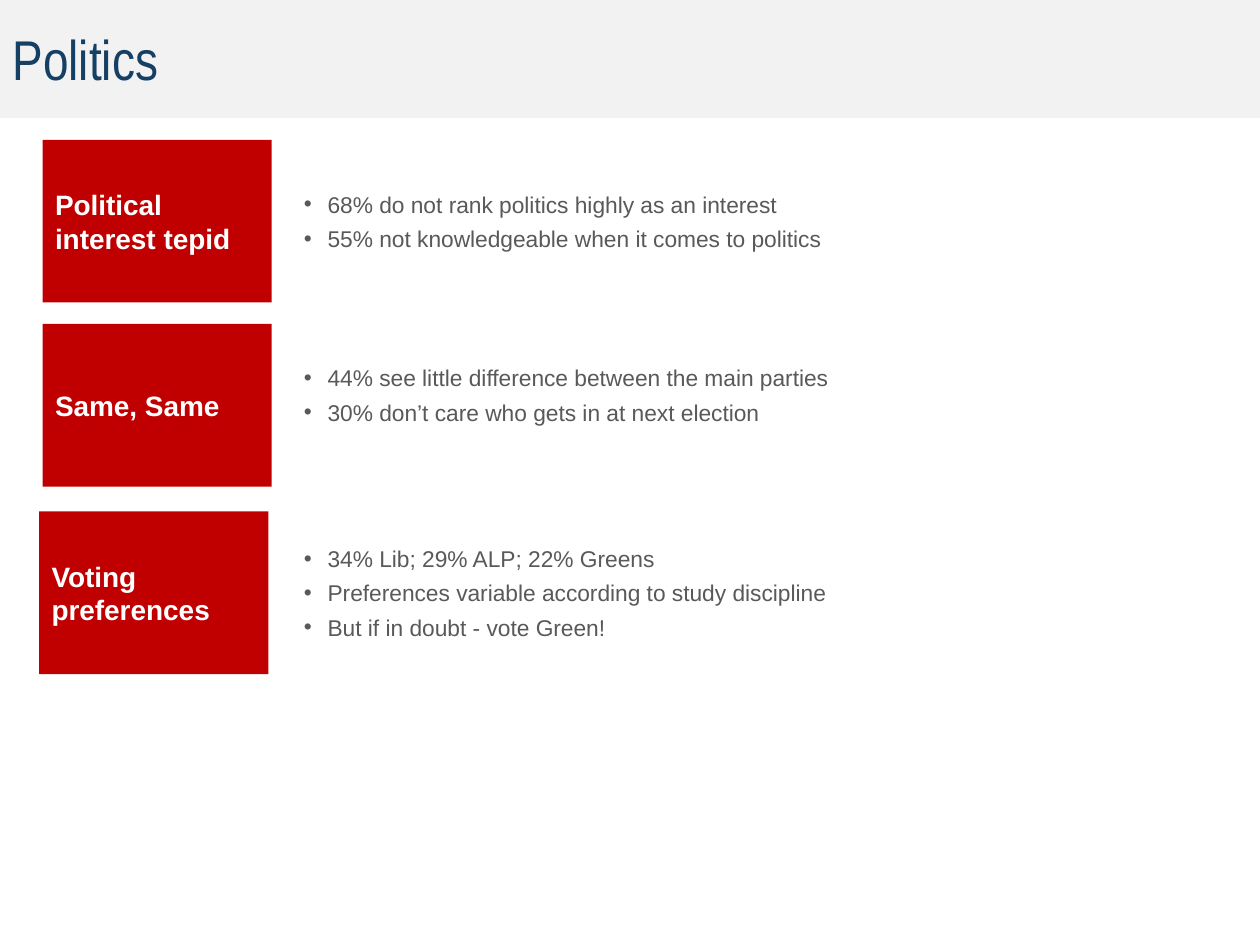
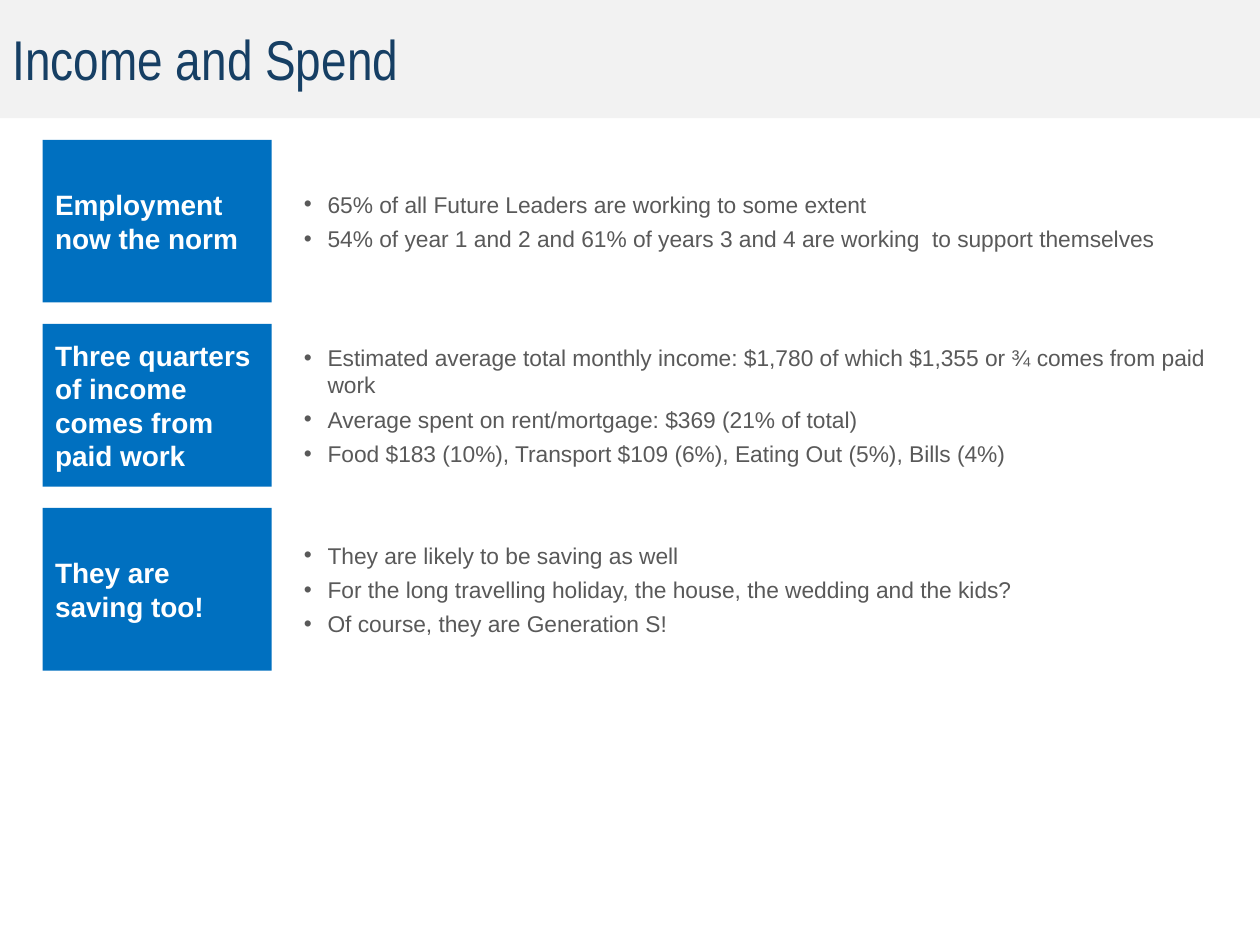
from lxml.etree import SubElement
from pptx import Presentation
from pptx.dml.color import RGBColor
from pptx.enum.shapes import MSO_SHAPE
from pptx.enum.text import MSO_ANCHOR, MSO_AUTO_SIZE, PP_ALIGN
from pptx.oxml.ns import qn
from pptx.util import Cm, Pt

# Shared colours and fonts
BAND, NAVY, GREY, WHITE = "F2F2F2", "163F64", "595959", "FFFFFF"
RED, BLUE = "C00000", "0070C0"
FONT, TITLE_FONT = "Arial", "Arial Narrow"

# Row grid, in cm
TOP, PITCH, ROW_H = 2.82, 3.71, 3.28
TILE_X, TILE_W = 0.86, 4.62
LIST_X, LIST_W = 5.87, 18.75
INDENT = 0.48
COMPARISON_LAYOUT = 4  # title and four body placeholders

# Each row: label, points, (tile dx, tile dy), list dy
POLITICS = [
    ("Political interest tepid",
     ["68% do not rank politics highly as an interest",
      "55% not knowledgeable when it comes to politics"],
     (0, 0), 0),
    ("Same, Same",
     ["44% see little difference between the main parties",
      "30% don’t care who gets in at next election"],
     (0, 0), -0.21),
    ("Voting preferences",
     ["34% Lib; 29% ALP; 22% Greens",
      "Preferences variable according to study discipline",
      "But if in doubt - vote Green!"],
     (-0.07, 0.07), 0.07),
]
INCOME = [
    ("Employment now the norm",
     ["65% of all Future Leaders are working to some extent",
      "54% of year 1 and 2 and 61% of years 3 and 4 are working  to support themselves"],
     (0, 0), 0),
    ("Three quarters of income comes from paid work",
     ["Estimated average total monthly income: $1,780 of which $1,355 or ¾ comes from paid work",
      "Average spent on rent/mortgage: $369 (21% of total)",
      "Food $183 (10%), Transport $109 (6%), Eating Out (5%), Bills (4%)"],
     (0, 0), 0),
    ("They are saving too!",
     ["They are likely to be saving as well",
      "For the long travelling holiday, the house, the wedding and the kids?",
      "Of course, they are Generation S!"],
     (0, 0), 0),
]


def rgb(color):
    return RGBColor.from_string(color)


def place(sp, x, y, w, h):
    sp.left, sp.top, sp.width, sp.height = Cm(x), Cm(y), Cm(w), Cm(h)


def fill(sp, color):
    sp.fill.solid()
    sp.fill.fore_color.rgb = rgb(color)


def frame(sp):
    tf = sp.text_frame
    tf.word_wrap = True
    tf.auto_size = MSO_AUTO_SIZE.NONE
    tf.vertical_anchor = MSO_ANCHOR.MIDDLE
    return tf


def add_run(p, text, size, color, font=FONT, bold=False):
    p.alignment = PP_ALIGN.LEFT
    r = p.add_run()
    r.text = text
    r.font.name, r.font.size, r.font.bold = font, Pt(size), bold
    r.font.color.rgb = rgb(color)


def set_bullet(p):
    pPr = p._p.get_or_add_pPr()
    pPr.set("marL", str(Cm(INDENT)))
    pPr.set("indent", str(-Cm(INDENT)))
    SubElement(pPr, qn("a:buFont"), typeface=FONT)
    SubElement(pPr, qn("a:buChar"), char="•")


def title_band(sp, text):
    place(sp, 0, -0.03, 25.4, 2.41)
    fill(sp, BAND)
    add_run(frame(sp).paragraphs[0], text, 32, NAVY, TITLE_FONT)


def add_tile(slide, x, y, text, color):
    sp = slide.shapes.add_shape(MSO_SHAPE.RECTANGLE, Cm(x), Cm(y), Cm(TILE_W), Cm(ROW_H))
    sp.shadow.inherit = False
    fill(sp, color)
    sp.line.fill.background()
    add_run(frame(sp).paragraphs[0], text, 16, WHITE, bold=True)


def bullet_list(sp, y, points):
    place(sp, LIST_X, y, LIST_W, ROW_H)
    tf = frame(sp)
    for i, point in enumerate(points):
        p = tf.add_paragraph() if i else tf.paragraphs[0]
        set_bullet(p)
        p.space_before = Pt(2 if i else 0)
        p.space_after = Pt(2)
        add_run(p, point, 13, GREY)


def add_summary_slide(prs, title, rows, color):
    slide = prs.slides.add_slide(prs.slide_layouts[COMPARISON_LAYOUT])
    title_band(slide.shapes.title, title)
    bodies = list(slide.placeholders)[1:]

    # One coloured label and one list per row
    for i, (label, points, (dx, dy), list_dy) in enumerate(rows):
        y = TOP + i * PITCH
        bullet_list(bodies[i], y + list_dy, points)
        add_tile(slide, TILE_X + dx, y + dy, label, color)

    # Drop the unused placeholders
    for sp in bodies[len(rows):]:
        sp.element.getparent().remove(sp.element)


def main():
    prs = Presentation()
    prs.slide_width, prs.slide_height = Cm(25.4), Cm(19.05)
    add_summary_slide(prs, "Politics", POLITICS, RED)
    add_summary_slide(prs, "Income and Spend", INCOME, BLUE)
    prs.save("out.pptx")


if __name__ == "__main__":
    main()
